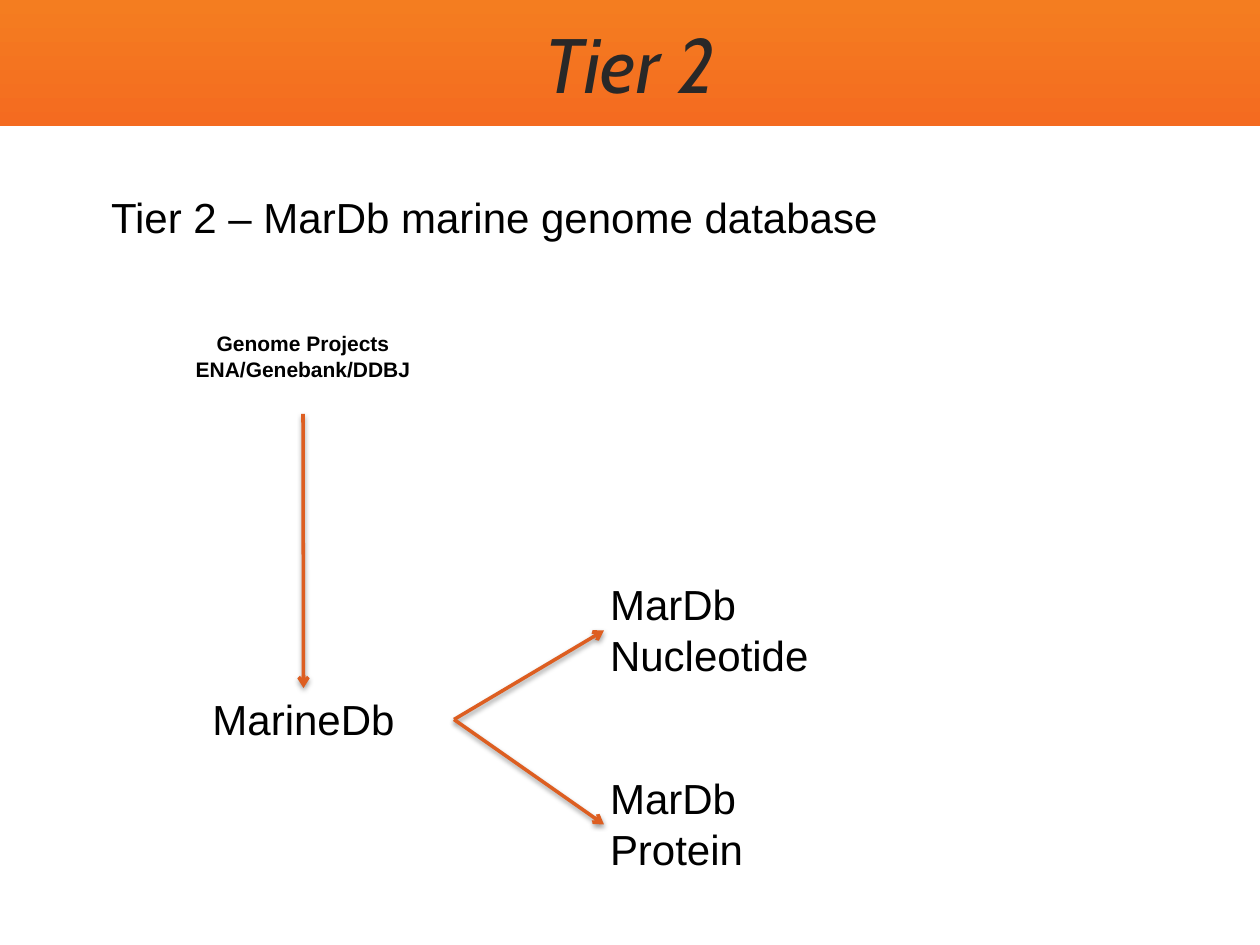
from lxml import etree
from pptx import Presentation
from pptx.dml.color import RGBColor
from pptx.enum.dml import MSO_LINE
from pptx.enum.shapes import MSO_CONNECTOR, MSO_SHAPE
from pptx.enum.text import MSO_ANCHOR, MSO_AUTO_SIZE, PP_ALIGN
from pptx.oxml import parse_xml
from pptx.oxml.ns import nsdecls, qn
from pptx.util import Pt

PX = 914400 / 126
COLORS = {"band_low": "F46B20", "band_high": "F47D20", "title": "282828",
          "text": "000000", "outline": "FFFFFF", "arrow": "DD5E21"}
RECTANGLE, STRAIGHT, SOLID = MSO_SHAPE.RECTANGLE, MSO_CONNECTOR.STRAIGHT, MSO_LINE.SOLID
TOP, MIDDLE = MSO_ANCHOR.TOP, MSO_ANCHOR.MIDDLE
FIT_SHAPE, FIXED = MSO_AUTO_SIZE.SHAPE_TO_FIT_TEXT, MSO_AUTO_SIZE.NONE
LEFT, CENTER = PP_ALIGN.LEFT, PP_ALIGN.CENTER
# Connection sites of a rectangle
SITE_TOP, SITE_LEFT, SITE_BOTTOM, SITE_RIGHT = range(4)


def px(*lengths):
    return [round(length * PX) for length in lengths]


def color(name):
    return RGBColor.from_string(COLORS[name])


def write_text(frame, text, size=24, font="Arial", fill="text", bold=False, italic=False,
               align=LEFT, anchor=TOP, inset=(6, 6), wrap=True, fit=FIT_SHAPE):
    """Write one paragraph per line of text; inset is (horizontal, vertical) in px."""
    frame.auto_size = fit
    frame.word_wrap = wrap
    frame.vertical_anchor = anchor
    frame.margin_left, frame.margin_top = px(*inset)
    frame.margin_right, frame.margin_bottom = px(*inset)
    for index, line in enumerate(text.split("\n")):
        paragraph = frame.add_paragraph() if index else frame.paragraphs[0]
        paragraph.alignment = align
        run = paragraph.add_run()
        run.text = line
        run.font.name, run.font.size = font, Pt(size)
        run.font.bold, run.font.italic = bold, italic
        run.font.color.rgb = color(fill)


def add_title_band(slide):
    band = slide.shapes.add_shape(RECTANGLE, *px(0, 0, 1260, 126))
    band.shadow.inherit = False
    band.line.fill.background()
    band.fill.gradient()
    band.fill.gradient_angle = 90
    for stop, name in zip(band.fill.gradient_stops, ("band_low", "band_high")):
        stop.color.rgb = color(name)
    # The band lies behind the title placeholder
    slide.shapes.title._element.addprevious(band._element)


def add_title(slide, text):
    title = slide.shapes.title
    title.left, title.top, title.width, title.height = px(63, 19, 1134, 88)
    write_text(title.text_frame, text, size=44, font="Cabin", fill="title", italic=True,
               align=CENTER, anchor=MIDDLE, inset=(13, 6), fit=FIXED)


def add_heading(slide, text):
    heading = slide.shapes.add_textbox(*px(105, 186, 789, 63))
    write_text(heading.text_frame, text, wrap=False)


def add_node(slide, text, bounds, **text_format):
    node = slide.shapes.add_shape(RECTANGLE, *px(*bounds))
    node.shadow.inherit = False
    node.fill.background()
    node.line.color.rgb = color("outline")
    node.line.width = Pt(2)
    write_text(node.text_frame, text, **text_format)
    return node


def add_arrow(slide, source, source_site, target, target_site):
    arrow = slide.shapes.add_connector(STRAIGHT, 0, 0, 0, 0)
    arrow.begin_connect(source, source_site)
    arrow.end_connect(target, target_site)
    arrow.line.color.rgb = color("arrow")
    arrow.line.width = Pt(2)
    arrow.line.dash_style = SOLID
    etree.SubElement(arrow.line._ln, qn("a:tailEnd"), type="arrow")
    arrow._element.spPr.append(parse_xml(
        f'<a:effectLst {nsdecls("a")}>'
        f'<a:outerShdw blurRad="{Pt(3)}" dist="{Pt(1.6)}" dir="5400000" rotWithShape="0">'
        '<a:srgbClr val="000000"><a:alpha val="38000"/></a:srgbClr>'
        '</a:outerShdw></a:effectLst>'))


def main():
    presentation = Presentation()
    presentation.slide_width, presentation.slide_height = px(1260, 945)
    slide = presentation.slides.add_slide(presentation.slide_layouts[5])

    add_title_band(slide)
    add_title(slide, "Tier 2")
    add_heading(slide, "Tier 2 – MarDb marine genome database")

    projects = add_node(slide, "Genome Projects\nENA/Genebank/DDBJ", (55, 325, 496, 89),
                        size=12, bold=True, align=CENTER)
    marine = add_node(slide, "MarineDb", (153, 688, 301, 63), align=CENTER)
    add_arrow(slide, projects, SITE_BOTTOM, marine, SITE_TOP)
    for product, top in (("Nucleotide", 573), ("Protein", 767)):
        database = add_node(slide, f"MarDb\n{product}", (604, top, 234, 115))
        add_arrow(slide, marine, SITE_RIGHT, database, SITE_LEFT)

    presentation.save("out.pptx")


if __name__ == "__main__":
    main()
